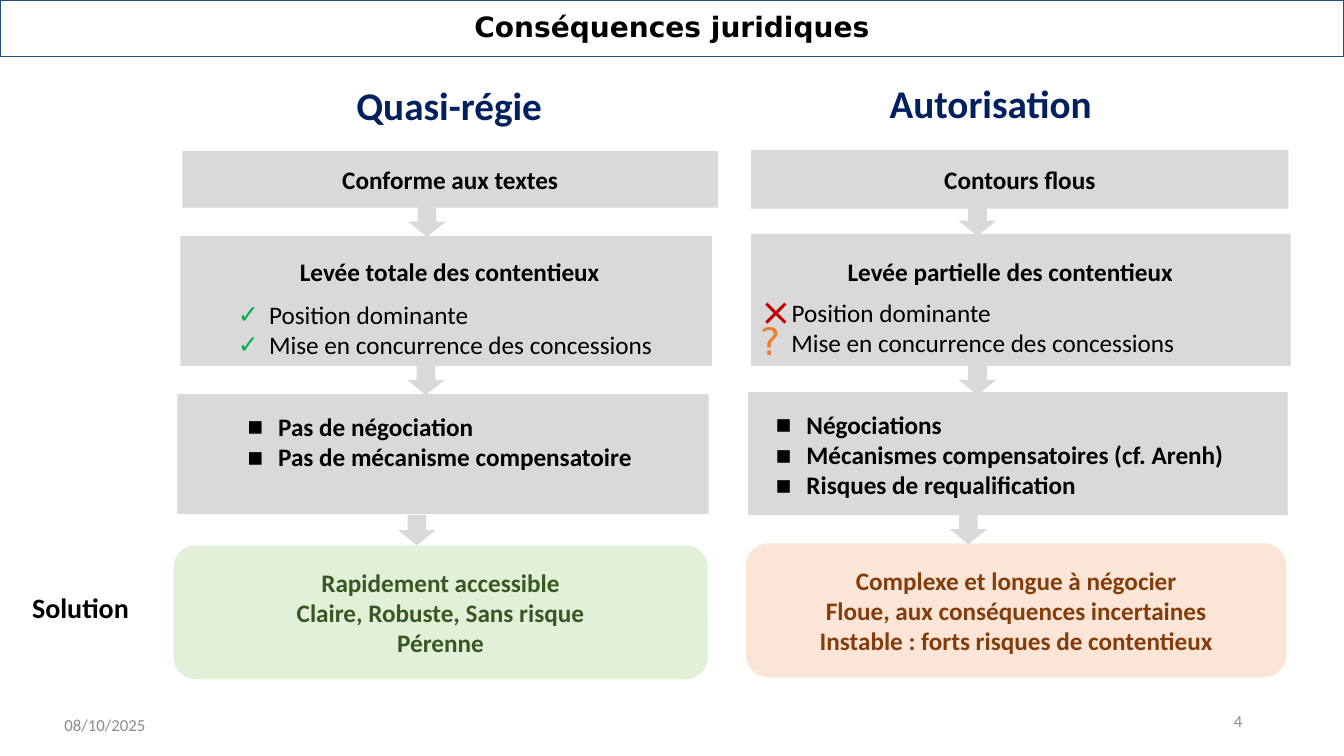
from dataclasses import dataclass
from typing import Optional

from lxml import etree
from pptx import Presentation
from pptx.dml.color import RGBColor
from pptx.enum.shapes import MSO_SHAPE
from pptx.enum.text import MSO_ANCHOR, MSO_AUTO_SIZE, PP_ALIGN
from pptx.oxml.ns import qn
from pptx.util import Emu, Pt

RECTANGLE = MSO_SHAPE.RECTANGLE
ROUNDED = MSO_SHAPE.ROUNDED_RECTANGLE
DOWN_ARROW = MSO_SHAPE.DOWN_ARROW
TOP = MSO_ANCHOR.TOP
MIDDLE = MSO_ANCHOR.MIDDLE
LEFT = PP_ALIGN.LEFT
CENTER = PP_ALIGN.CENTER
RIGHT = PP_ALIGN.RIGHT
NO_AUTOFIT = MSO_AUTO_SIZE.NONE
TITLE_ONLY = 5
EMU_PER_PX = 9144
PAGE_WIDTH = 1333
PAGE_HEIGHT = 750
ARROW_WIDTH = 37
ARROW_HEIGHT = 30


@dataclass(frozen=True)
class Theme:
    body_font: str = "Calibri"
    title_font: str = "DejaVu Sans"
    black: str = "000000"
    grey: str = "D9D9D9"
    footer: str = "8C8C8C"
    navy: str = "002060"
    title_line: str = "1F4E79"
    check: str = "00B050"
    cross: str = "C00000"
    question: str = "ED7D31"
    green_fill: str = "E2F0D9"
    green_text: str = "385723"
    orange_fill: str = "FBE5D6"
    orange_text: str = "843C0B"
    footer_size: int = 12
    body_size: int = 18
    label_size: int = 20
    heading_size: int = 28


THEME = Theme()


@dataclass(frozen=True)
class Area:
    left: int
    top: int
    width: int
    height: int


@dataclass(frozen=True)
class Style:
    size: int = THEME.body_size
    color: str = THEME.black
    bold: bool = True
    align: PP_ALIGN = CENTER
    anchor: MSO_ANCHOR = MIDDLE
    font: str = THEME.body_font


@dataclass(frozen=True)
class Bullet:
    char: str
    color: str = THEME.black
    percent: int = 100
    margin: int = 31
    level: int = 0


@dataclass(frozen=True)
class Line:
    text: str
    bullet: Optional[Bullet] = None


@dataclass(frozen=True)
class Panel:
    area: Area
    fill: str = THEME.grey
    kind: MSO_SHAPE = RECTANGLE
    lines: tuple[Line, ...] = ()
    style: Style = Style()


@dataclass(frozen=True)
class Caption:
    area: Area
    lines: tuple[Line, ...]
    style: Style


HEADING = Style(THEME.heading_size, THEME.navy)
SUBHEADING = Style(anchor=TOP)
PLAIN_LIST = Style(bold=False, align=LEFT, anchor=TOP)
BOLD_LIST = Style(align=LEFT, anchor=TOP)
LABEL = Style(THEME.label_size, align=LEFT, anchor=TOP)
DATE = Style(THEME.footer_size, THEME.footer, False, LEFT)
NUMBER = Style(THEME.footer_size, THEME.footer, False, RIGHT)
TITLE = Style(THEME.label_size, font=THEME.title_font)

CHECK = Bullet("✓", THEME.check)
CROSS = Bullet("×", THEME.cross, 150)
QUESTION = Bullet("?", THEME.question, 150)
SQUARE = Bullet("▪", margin=81, level=1)


def lines(*texts: str, bullet: Optional[Bullet] = None) -> tuple[Line, ...]:
    return tuple(Line(text, bullet) for text in texts)


PANELS = (
    Panel(Area(181, 150, 531, 56), lines=lines("Conforme aux textes")),
    Panel(Area(745, 149, 533, 58), lines=lines("Contours flous")),
    Panel(Area(179, 234, 527, 129)),
    Panel(Area(745, 232, 535, 131)),
    Panel(Area(176, 391, 527, 119)),
    Panel(Area(742, 389, 535, 122)),
    Panel(Area(172, 541, 530, 133), THEME.green_fill, ROUNDED,
          lines("Rapidement accessible", "Claire, Robuste, Sans risque", "Pérenne"),
          Style(color=THEME.green_text)),
    Panel(Area(740, 539, 536, 133), THEME.orange_fill, ROUNDED,
          lines("Complexe et longue à négocier", "Floue, aux conséquences incertaines",
                "Instable : forts risques de contentieux"),
          Style(color=THEME.orange_text)),
)

ARROW_CORNERS = ((405, 205), (951, 204), (404, 362), (951, 362), (395, 511), (942, 510))

CAPTIONS = (
    Caption(Area(180, 76, 531, 56), lines("Quasi-régie"), HEADING),
    Caption(Area(717, 74, 531, 56), lines("Autorisation"), HEADING),
    Caption(Area(185, 249, 522, 40), lines("Levée totale des contentieux"), SUBHEADING),
    Caption(Area(741, 249, 522, 40), lines("Levée partielle des contentieux"), SUBHEADING),
    Caption(Area(226, 292, 455, 71),
            lines("Position dominante", "Mise en concurrence des concessions", bullet=CHECK),
            PLAIN_LIST),
    Caption(Area(744, 290, 537, 71),
            (Line("Position dominante", CROSS),
             Line("Mise en concurrence des concessions", QUESTION)),
            PLAIN_LIST),
    Caption(Area(185, 403, 522, 71),
            lines("Pas de négociation", "Pas de mécanisme compensatoire", bullet=SQUARE),
            BOLD_LIST),
    Caption(Area(709, 401, 555, 101),
            lines("Négociations", "Mécanismes compensatoires (cf. Arenh)",
                  "Risques de requalification", bullet=SQUARE),
            BOLD_LIST),
    Caption(Area(22, 581, 163, 44), lines("Solution"), LABEL),
    Caption(Area(54, 699, 300, 40), lines("08/10/2025"), DATE),
    Caption(Area(942, 695, 300, 40), lines("4"), NUMBER),
)


def px(length: int) -> Emu:
    return Emu(length * EMU_PER_PX)


def place(area: Area) -> tuple[Emu, Emu, Emu, Emu]:
    return px(area.left), px(area.top), px(area.width), px(area.height)


def add_bullet(para, bullet: Bullet) -> None:
    para.level = bullet.level
    properties = para._p.get_or_add_pPr()
    properties.set("marL", str(px(bullet.margin)))
    properties.set("indent", str(px(-31)))
    color = etree.SubElement(properties, qn("a:buClr"))
    etree.SubElement(color, qn("a:srgbClr"), val=bullet.color)
    etree.SubElement(properties, qn("a:buSzPct"), val=str(bullet.percent * 1000))
    etree.SubElement(properties, qn("a:buFont"), typeface=THEME.title_font)
    etree.SubElement(properties, qn("a:buChar"), char=bullet.char)


def write(box, content: tuple[Line, ...], style: Style) -> None:
    frame = box.text_frame
    frame.word_wrap = True
    frame.auto_size = NO_AUTOFIT
    frame.vertical_anchor = style.anchor
    for index, line in enumerate(content):
        para = frame.add_paragraph() if index else frame.paragraphs[0]
        para.add_run().text = line.text
        para.alignment = style.align
        if line.bullet:
            add_bullet(para, line.bullet)
        para.font.name = style.font
        para.font.size = Pt(style.size)
        para.font.bold = style.bold
        para.font.color.rgb = RGBColor.from_string(style.color)


def draw_panel(page, panel: Panel) -> None:
    box = page.shapes.add_shape(panel.kind, *place(panel.area))
    box.shadow.inherit = False
    box.fill.solid()
    box.fill.fore_color.rgb = RGBColor.from_string(panel.fill)
    box.line.fill.background()
    write(box, panel.lines, panel.style)


def draw_title(page) -> None:
    title = page.shapes.title
    title.left, title.top, title.width, title.height = place(Area(0, 0, PAGE_WIDTH, 56))
    title.line.color.rgb = RGBColor.from_string(THEME.title_line)
    title.line.width = Pt(0.75)
    write(title, lines("Conséquences juridiques"), TITLE)
    title.text_frame.paragraphs[0].line_spacing = 0.9


def main() -> None:
    deck = Presentation()
    deck.slide_width, deck.slide_height = px(PAGE_WIDTH), px(PAGE_HEIGHT)
    page = deck.slides.add_slide(deck.slide_layouts[TITLE_ONLY])
    draw_title(page)
    for panel in PANELS:
        draw_panel(page, panel)
    for left, top in ARROW_CORNERS:
        draw_panel(page, Panel(Area(left, top, ARROW_WIDTH, ARROW_HEIGHT), kind=DOWN_ARROW))
    for caption in CAPTIONS:
        write(page.shapes.add_textbox(*place(caption.area)), caption.lines, caption.style)
    deck.save("out.pptx")


if __name__ == "__main__":
    main()
